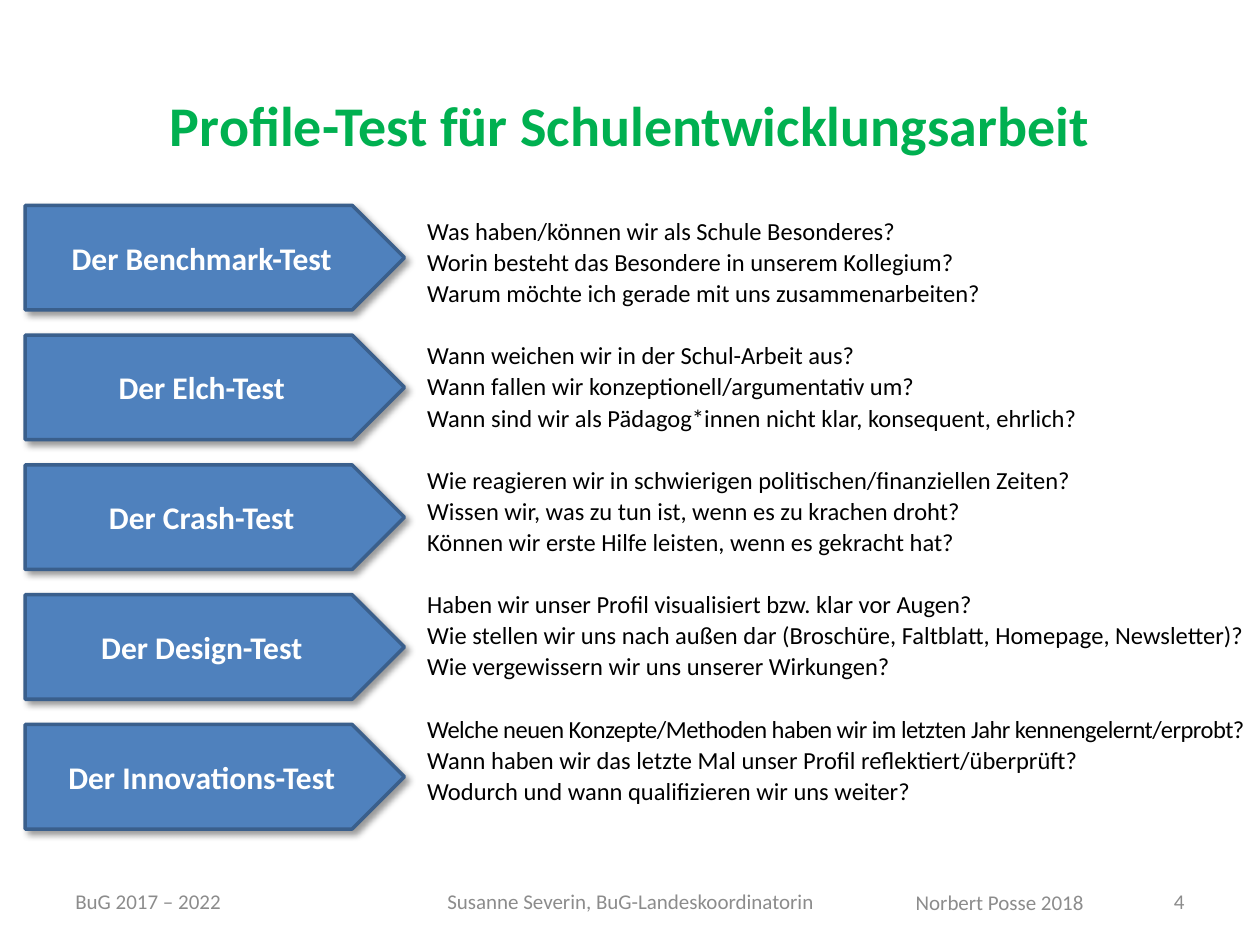
from lxml.etree import SubElement
from pptx import Presentation
from pptx.dml.color import RGBColor
from pptx.enum.shapes import MSO_SHAPE
from pptx.enum.text import MSO_ANCHOR, MSO_AUTO_SIZE, PP_ALIGN
from pptx.oxml.ns import qn
from pptx.util import Inches, Pt

COLORS = {"green": "00B050", "blue": "4F81BD", "outline": "3A5F8C",
          "white": "FFFFFF", "black": "000000", "gray": "8C8C8C"}
TITLE = "Profile-Test für Schulentwicklungsarbeit"
TESTS = [
    ("Der Benchmark-Test", [
        "Was haben/können wir als Schule Besonderes?",
        "Worin besteht das Besondere in unserem Kollegium?",
        "Warum möchte ich gerade mit uns zusammenarbeiten?"]),
    ("Der Elch-Test", [
        "Wann weichen wir in der Schul-Arbeit aus?",
        "Wann fallen wir konzeptionell/argumentativ um?",
        "Wann sind wir als Pädagog*innen nicht klar, konsequent, ehrlich?"]),
    ("Der Crash-Test", [
        "Wie reagieren wir in schwierigen politischen/finanziellen Zeiten?",
        "Wissen wir, was zu tun ist, wenn es zu krachen droht?",
        "Können wir erste Hilfe leisten, wenn es gekracht hat?"]),
    ("Der Design-Test", [
        "Haben wir unser Profil visualisiert bzw. klar vor Augen?",
        "Wie stellen wir uns nach außen dar (Broschüre, Faltblatt, Homepage, Newsletter)?",
        "Wie vergewissern wir uns unserer Wirkungen?"]),
    ("Der Innovations-Test", [
        "Welche neuen Konzepte/Methoden haben wir im letzten Jahr kennengelernt/erprobt?",
        "Wann haben wir das letzte Mal unser Profil reflektiert/überprüft?",
        "Wodurch und wann qualifizieren wir uns weiter?"]),
]
CONDENSED = TESTS[-1][1][0]
FOOTERS = [
    ("BuG 2017 – 2022", (0.5, 6.95, 2.33, 0.4), PP_ALIGN.LEFT, MSO_ANCHOR.MIDDLE),
    ("Susanne Severin, BuG-Landeskoordinatorin", (3.42, 6.95, 3.17, 0.4),
     PP_ALIGN.CENTER, MSO_ANCHOR.MIDDLE),
    ("Norbert Posse 2018", (6.98, 7.01, 1.72, 0.39), PP_ALIGN.RIGHT, MSO_ANCHOR.TOP),
    ("4", (7.17, 6.95, 2.33, 0.4), PP_ALIGN.RIGHT, MSO_ANCHOR.MIDDLE),
]
ARROW_BOX = (0.2, 1.63, 3.01, 0.83)
ARROW_PITCH = 1.03
LINE_GAP, GROUP_GAP = 2.6, 20.5
FORMATS = {
    "title": {"size": Pt(32), "bold": True, "color": "green"},
    "arrow": {"size": Pt(18), "bold": True, "color": "white"},
    "question": {"size": Pt(14), "bold": False, "color": "black"},
    "footer": {"size": Pt(12), "bold": False, "color": "gray"},
}


def rgb(name):
    return RGBColor.from_string(COLORS[name])


def place(shape, box):
    for name, value in zip(("left", "top", "width", "height"), box):
        setattr(shape, name, Inches(value))


def write(paragraph, text, style, alignment):
    paragraph.alignment = alignment
    run = paragraph.add_run()
    run.text = text
    run.font.name = "Calibri"
    for name, value in FORMATS[style].items():
        if name == "color":
            run.font.color.rgb = rgb(value)
        else:
            setattr(run.font, name, value)
    return run


def set_frame(frame, anchor, wrap=True):
    settings = {"vertical_anchor": anchor, "word_wrap": wrap,
                "auto_size": MSO_AUTO_SIZE.NONE}
    for name, value in settings.items():
        setattr(frame, name, value)


def add_shadow(shape):
    shape.shadow.inherit = False
    effects = shape._element.spPr.find(qn("a:effectLst"))
    shadow = SubElement(effects, qn("a:outerShdw"), blurRad=str(Pt(4)),
                        dist=str(Pt(3)), dir="2700000", rotWithShape="0")
    color = SubElement(shadow, qn("a:srgbClr"), val=COLORS["black"])
    SubElement(color, qn("a:alpha"), val="40000")


def add_arrow(slide, index, label):
    left, top, width, height = ARROW_BOX
    box = (left, top + index * ARROW_PITCH, width, height)
    shape = slide.shapes.add_shape(MSO_SHAPE.PENTAGON, *map(Inches, box))
    shape.fill.solid()
    shape.fill.fore_color.rgb = rgb("blue")
    shape.line.color.rgb = rgb("outline")
    shape.line.width = Pt(2)
    add_shadow(shape)
    set_frame(shape.text_frame, MSO_ANCHOR.MIDDLE)
    write(shape.text_frame.paragraphs[0], label, "arrow", PP_ALIGN.CENTER)


def fill_questions(body):
    place(body, (3.29, 1.69, 6.71, 4.85))
    frame = body.text_frame
    set_frame(frame, MSO_ANCHOR.TOP, wrap=False)
    for group, (_, questions) in enumerate(TESTS):
        for row, question in enumerate(questions):
            first = group == row == 0
            paragraph = frame.paragraphs[0] if first else frame.add_paragraph()
            properties = paragraph._p.get_or_add_pPr()
            properties.set("marL", "0")
            properties.set("indent", "0")
            SubElement(properties, qn("a:buNone"))
            paragraph.line_spacing = 0.9
            gap = 0 if first else LINE_GAP if row else GROUP_GAP
            paragraph.space_before = Pt(gap)
            run = write(paragraph, question, "question", PP_ALIGN.LEFT)
            if question == CONDENSED:
                run._r.get_or_add_rPr().set("spc", "-30")


def main():
    """Build the profile test slide."""
    presentation = Presentation()
    presentation.slide_width, presentation.slide_height = Inches(10), Inches(7.5)
    slide = presentation.slides.add_slide(presentation.slide_layouts[1])
    title, body = slide.placeholders
    place(title, (0, 0.36, 10, 1.25))
    set_frame(title.text_frame, MSO_ANCHOR.MIDDLE)
    write(title.text_frame.paragraphs[0], TITLE, "title", PP_ALIGN.CENTER)
    fill_questions(body)
    for index, (label, _) in enumerate(TESTS):
        add_arrow(slide, index, label)
    for text, box, alignment, anchor in FOOTERS:
        shape = slide.shapes.add_textbox(*map(Inches, box))
        set_frame(shape.text_frame, anchor)
        write(shape.text_frame.paragraphs[0], text, "footer", alignment)
    presentation.save("out.pptx")


if __name__ == "__main__":
    main()
